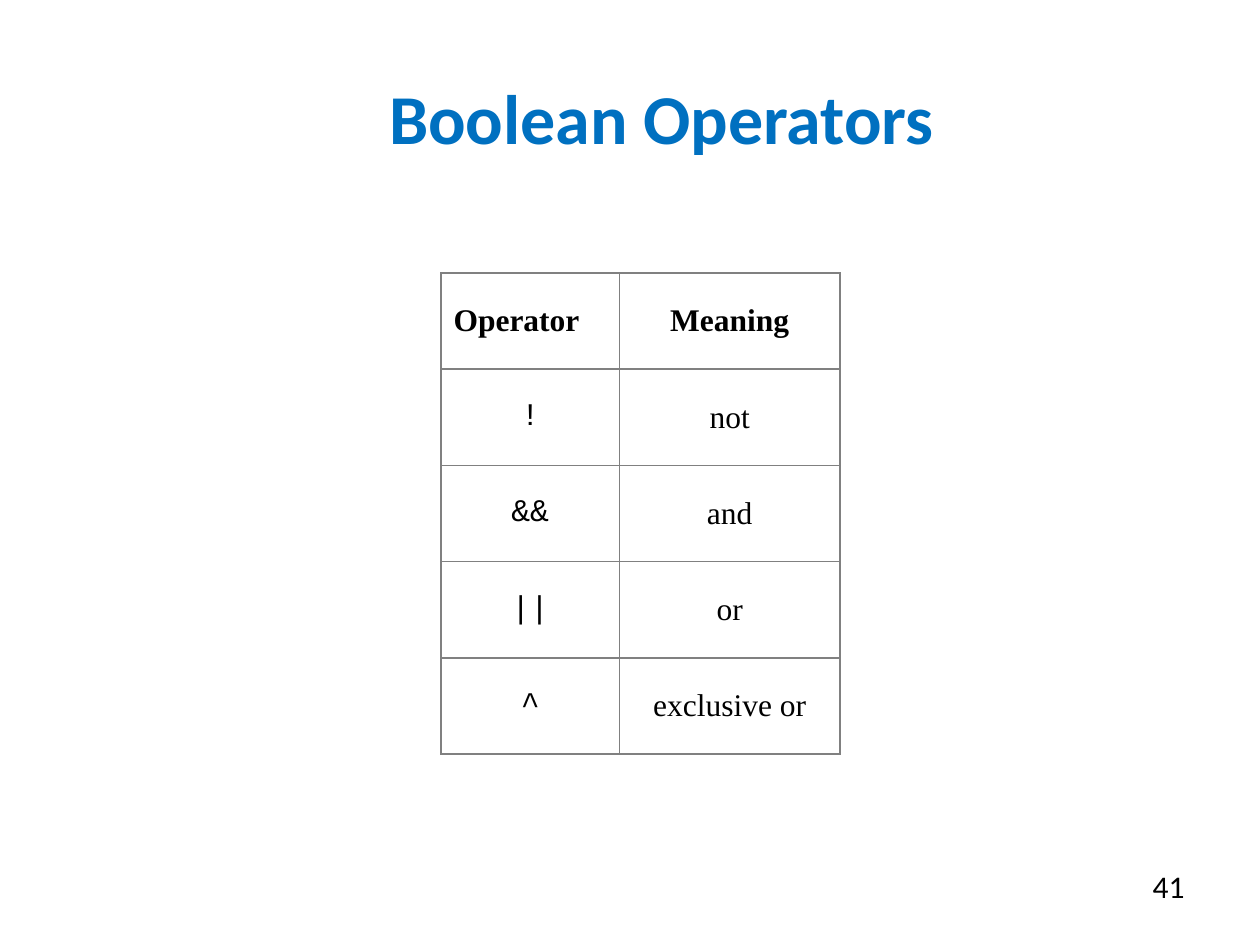
from lxml.etree import SubElement
from pptx import Presentation
from pptx.dml.color import RGBColor
from pptx.enum.text import MSO_ANCHOR, PP_ALIGN
from pptx.oxml.ns import qn
from pptx.util import Pt

BLUE = RGBColor(0x00, 0x70, 0xC0)
BLACK = RGBColor(0x00, 0x00, 0x00)
GRAY = RGBColor(0x80, 0x80, 0x80)


def write(tf, text, font="Calibri", size=18, color=BLACK, bold=False,
          align=PP_ALIGN.CENTER):
    p = tf.paragraphs[0]
    p.alignment = align
    r = p.add_run()
    r.text = text
    r.font.name = font
    r.font.size = Pt(size)
    r.font.bold = bold
    r.font.color.rgb = color


def add_borders(cell, color=GRAY, width=Pt(1)):
    tcPr = cell._tc.get_or_add_tcPr()
    for i, side in enumerate(("a:lnL", "a:lnR", "a:lnT", "a:lnB")):
        ln = tcPr.makeelement(qn(side), {"w": str(width)})
        fill = SubElement(ln, qn("a:solidFill"))
        SubElement(fill, qn("a:srgbClr"), val=str(color))
        tcPr.insert(i, ln)


prs = Presentation()
prs.slide_width, prs.slide_height = Pt(720), Pt(540)
s = prs.slides.add_slide(prs.slide_layouts[5])

# Title
title = s.shapes.title
title.left, title.top, title.width, title.height = Pt(132), Pt(21.6), Pt(492), Pt(90)
title.text_frame.vertical_anchor = MSO_ANCHOR.MIDDLE
write(title.text_frame, "Boolean Operators", size=40, color=BLUE, bold=True)

# Operator table
rows = [
    ("Operator", "Meaning"),
    ("!", "not"),
    ("&&", "and"),
    ("||", "or"),
    ("^", "exclusive or"),
]
table = s.shapes.add_table(len(rows), 2, Pt(252), Pt(156), Pt(228), Pt(275)).table
table.first_row = True
table.horz_banding = False
table.columns[0].width, table.columns[1].width = Pt(102), Pt(126)
for i, row in enumerate(rows):
    table.rows[i].height = Pt(55)
    for j, text in enumerate(row):
        cell = table.cell(i, j)
        cell.fill.background()
        cell.vertical_anchor = MSO_ANCHOR.MIDDLE
        header = i == 0
        write(cell.text_frame, text, bold=header,
              font="Courier New" if j == 0 and not header else "Times New Roman",
              align=PP_ALIGN.LEFT if header and j == 0 else PP_ALIGN.CENTER)
        add_borders(cell)

# Slide number
number = s.shapes.add_textbox(Pt(516), Pt(492), Pt(168), Pt(37.5))
number.text_frame.word_wrap = True
write(number.text_frame, "41", align=PP_ALIGN.RIGHT)

prs.save("out.pptx")
